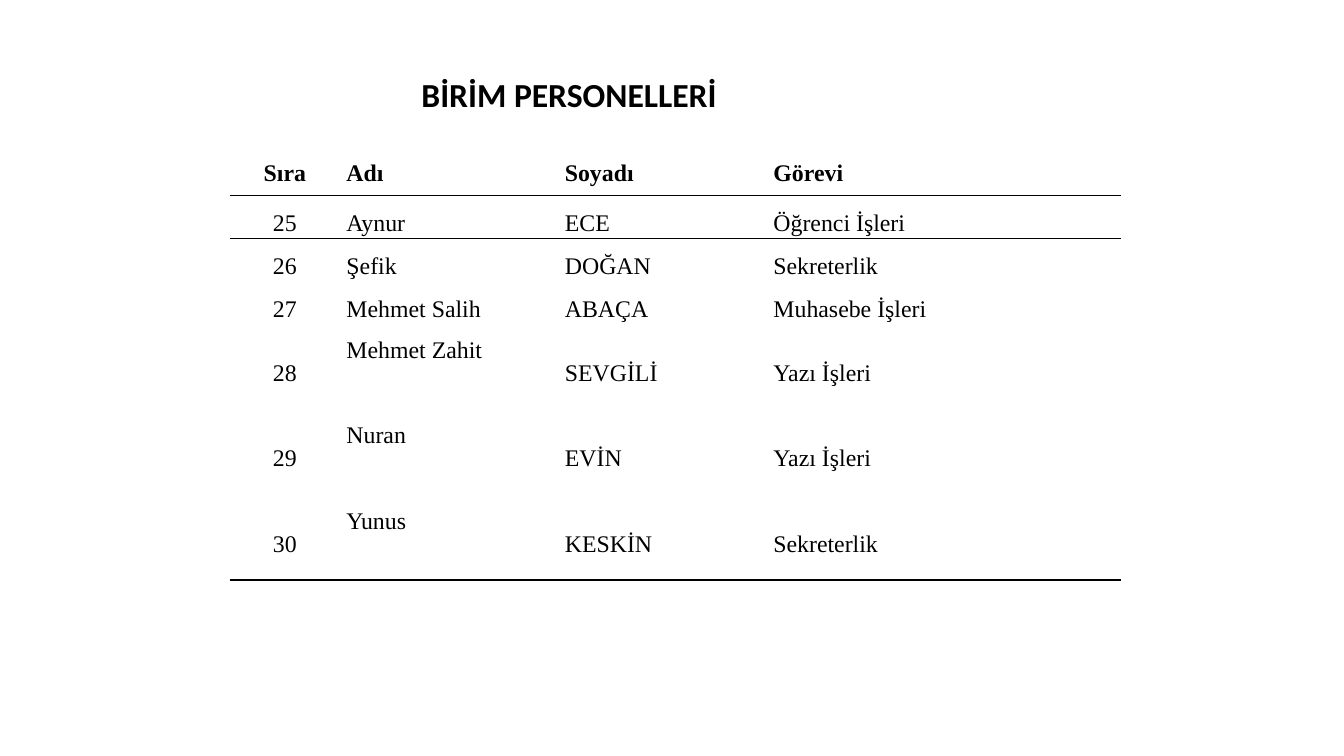
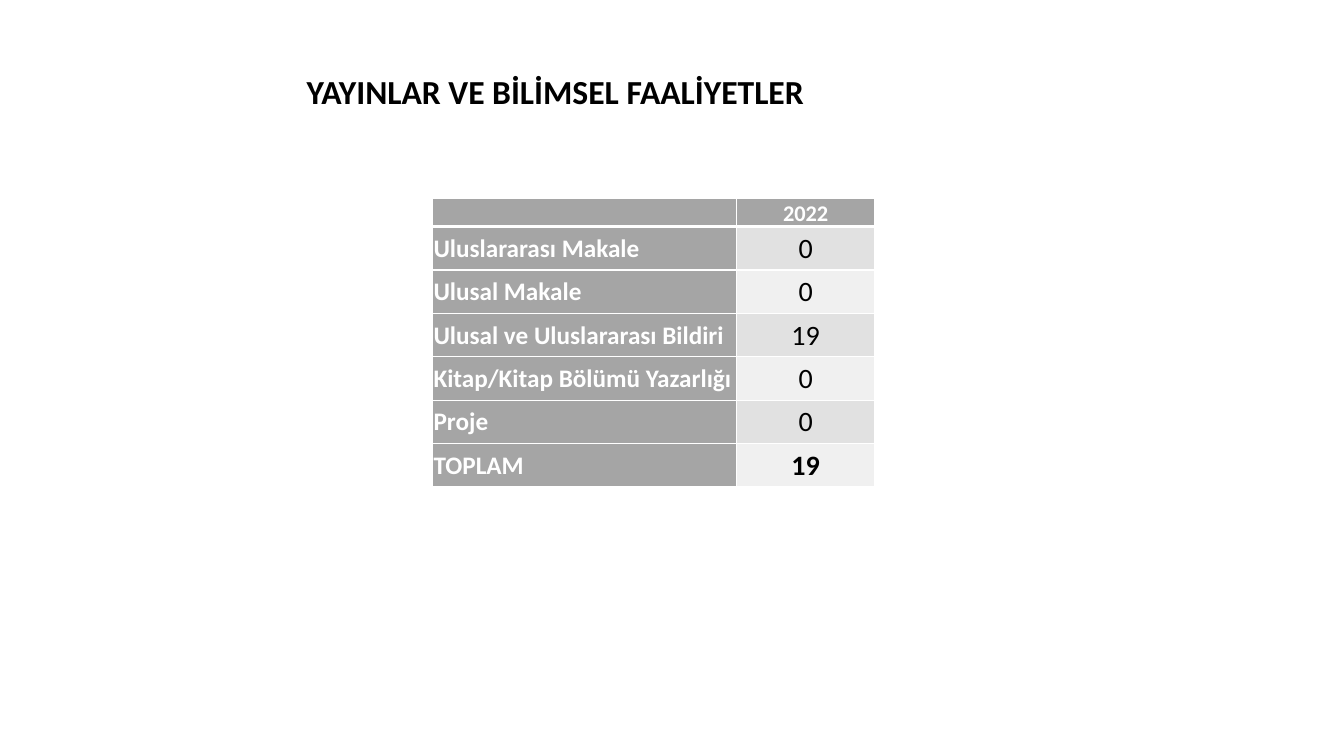
from dataclasses import dataclass

from lxml.etree import SubElement
from pptx import Presentation
from pptx.dml.color import RGBColor
from pptx.enum.text import MSO_ANCHOR, PP_ALIGN
from pptx.oxml.ns import qn
from pptx.util import Pt


@dataclass(frozen=True)
class Theme:
    black: str = "000000"
    white: str = "FFFFFF"
    header: str = "A5A5A5"
    bands: tuple = ("E1E1E1", "F0F0F0")
    sans: str = "Calibri"
    serif: str = "Times New Roman"
    title_size: int = 24
    staff_size: int = 17
    year_size: int = 16
    label_size: int = 18
    value_size: int = 20
    no_table_style: str = "{2D5ABB26-0587-4C30-8999-92F81FD0307C}"


THEME = Theme()

STAFF_HEADER = ("Sıra", "Adı", "Soyadı", "Görevi")
STAFF = (
    ("25", "Aynur", "ECE", "Öğrenci İşleri"),
    ("26", "Şefik", "DOĞAN", "Sekreterlik"),
    ("27", "Mehmet Salih", "ABAÇA", "Muhasebe İşleri"),
    ("28", "Mehmet Zahit", "SEVGİLİ", "Yazı İşleri"),
    ("29", "Nuran", "EVİN", "Yazı İşleri"),
    ("30", "Yunus", "KESKİN", "Sekreterlik"),
)
PUBLICATIONS = (
    ("Uluslararası Makale", "0"),
    ("Ulusal Makale", "0"),
    ("Ulusal ve Uluslararası Bildiri", "19"),
    ("Kitap/Kitap Bölümü Yazarlığı", "0"),
    ("Proje", "0"),
    ("TOPLAM", "19"),
)


def write(para, text, font, size, color, bold=False, align=PP_ALIGN.LEFT):
    para.text = text
    para.alignment = align
    for span in para.runs:
        span.font.name = font
        span.font.size = Pt(size)
        span.font.bold = bold
        span.font.color.rgb = RGBColor.from_string(color)
    if not text:
        # An empty cell takes its line height from the paragraph end mark.
        SubElement(para._p, qn("a:endParaRPr"), sz=str(size * 100))


def add_title(page, box, text, align, wrap):
    frame = page.shapes.add_textbox(*map(Pt, box)).text_frame
    frame.word_wrap = wrap
    write(frame.paragraphs[0], text, THEME.sans, THEME.title_size,
          THEME.black, bold=True, align=align)


def add_plain_table(page, left, top, widths, heights):
    """Add a table without style or banding."""
    frame = page.shapes.add_table(
        len(heights), len(widths), Pt(left), Pt(top),
        Pt(sum(widths)), Pt(sum(heights)))
    table = frame.table
    table.first_row = table.horz_banding = False
    next(table._tbl.iter(qn("a:tableStyleId"))).text = THEME.no_table_style
    for column, width in zip(table.columns, widths):
        column.width = Pt(width)
    for row, height in zip(table.rows, heights):
        row.height = Pt(height)
    return table


def style_cell(cell, fill, borders, color, margins, anchor=MSO_ANCHOR.MIDDLE):
    """Set margins, borders (width by side: L, R, T, B) and fill of a cell."""
    (cell.margin_left, cell.margin_top,
     cell.margin_right, cell.margin_bottom) = map(Pt, margins)
    cell.vertical_anchor = anchor
    properties = cell._tc.get_or_add_tcPr()
    for side in "LRTB":
        width = borders.get(side, 0)
        line = SubElement(properties, qn(f"a:ln{side}"), w=str(Pt(width)))
        if width:
            solid = SubElement(line, qn("a:solidFill"))
            SubElement(solid, qn("a:srgbClr"), val=color)
        else:
            SubElement(line, qn("a:noFill"))
    if fill:
        cell.fill.solid()
        cell.fill.fore_color.rgb = RGBColor.from_string(fill)
    else:
        cell.fill.background()


def add_staff_table(page, left, top, widths, heights):
    table = add_plain_table(page, left, top, widths, heights)
    ruled_rows = (0, 1, len(STAFF))
    single_height = min(heights)
    for row, record in enumerate((STAFF_HEADER, *STAFF)):
        borders = {}
        if row in ruled_rows:
            borders["B"] = 1
        if row - 1 in ruled_rows:
            borders["T"] = 1
        for column, text in enumerate(record):
            cell = table.cell(row, column)
            tall_name = column == 1 and heights[row] > single_height
            at_top = row == 0 or tall_name
            style_cell(cell, None, borders, THEME.black, (4.5, 0, 4.5, 0),
                       MSO_ANCHOR.TOP if at_top else MSO_ANCHOR.MIDDLE)
            para = cell.text_frame.paragraphs[0]
            write(para, text, THEME.serif, THEME.staff_size, THEME.black,
                  bold=row == 0,
                  align=PP_ALIGN.LEFT if column else PP_ALIGN.CENTER)
            para.line_spacing = 1.5


def add_publication_table(page, left, top, widths, heights):
    table = add_plain_table(page, left, top, widths, heights)
    for row, record in enumerate((("", "2022"), *PUBLICATIONS)):
        borders = {"L": 1, "R": 1, "T": 3 if row == 1 else 1,
                   "B": 3 if row == 0 else 1}
        for column, text in enumerate(record):
            cell = table.cell(row, column)
            is_value = row > 0 and column == 1
            fill = THEME.bands[(row - 1) % 2] if is_value else THEME.header
            style_cell(cell, fill, borders, THEME.white, (0.7, 0.7, 0.7, 0))
            if row == 0:
                size = THEME.year_size
            else:
                size = THEME.value_size if is_value else THEME.label_size
            write(cell.text_frame.paragraphs[0], text, THEME.sans, size,
                  THEME.black if is_value else THEME.white,
                  bold=not is_value or row == len(PUBLICATIONS),
                  align=PP_ALIGN.CENTER if column else PP_ALIGN.LEFT)


def build_staff_page(page):
    add_title(page, (140, 49, 533, 66), "BİRİM PERSONELLERİ",
              PP_ALIGN.CENTER, wrap=True)
    add_staff_table(page, 164, 105, (79, 156, 149, 253),
                    (34.5, *[30.5] * 3, *[61] * 3))


def build_publication_page(page):
    add_title(page, (212, 47, 373, 36), "YAYINLAR VE BİLİMSEL FAALİYETLER",
              PP_ALIGN.LEFT, wrap=False)
    add_publication_table(page, 309, 142, (217, 99),
                          (19, *[31] * len(PUBLICATIONS)))


def main():
    deck = Presentation()
    deck.slide_width, deck.slide_height = Pt(960), Pt(540)
    blank = deck.slide_layouts[6]
    for build in (build_staff_page, build_publication_page):
        build(deck.slides.add_slide(blank))
    deck.save("out.pptx")


if __name__ == "__main__":
    main()
